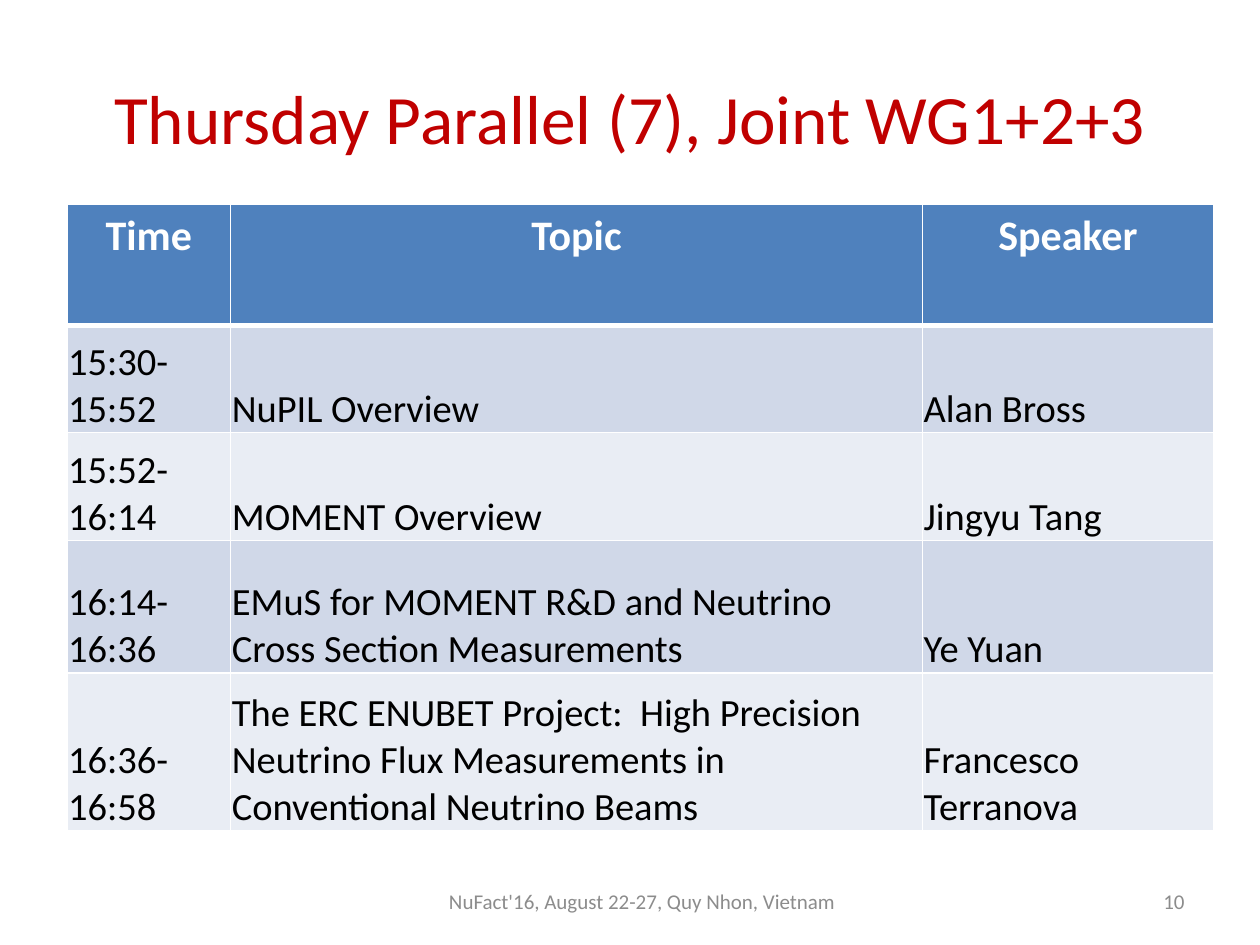
from lxml import etree
from pptx import Presentation
from pptx.dml import color
from pptx.enum import text
from pptx.oxml import ns
from pptx.util import Pt

FONT = "Calibri"
AL = text.PP_ALIGN
ANC = text.MSO_ANCHOR
HEAD = ["Time", "Topic", "Speaker"]
TALKS = [
    ["15:30-15:52", "NuPIL Overview", "Alan Bross"],
    ["15:52-16:14", "MOMENT Overview", "Jingyu Tang"],
    ["16:14-16:36", "EMuS for MOMENT R&D and Neutrino Cross Section Measurements", "Ye Yuan"],
    ["16:36-16:58", "The ERC ENUBET Project:  High Precision Neutrino Flux Measurements in "
     "Conventional Neutrino Beams", "Francesco Terranova"],
]
COLS = [93.6, 395.3, 166.3]
ROWS = [69.1, 61.2, 61.9, 75.6, 90]


def rgb(h):
    return color.RGBColor.from_string(h)


def write(tf, content, size=22, fill="000000", bold=False, align=AL.LEFT):
    tf.word_wrap = True
    p = tf.paragraphs[0]
    p.alignment = align
    r = p.add_run()
    r.text = content
    r.font.name, r.font.size, r.font.bold = FONT, Pt(size), bold
    r.font.color.rgb = rgb(fill)


def border(cell, side, width, fill="FFFFFF"):
    tcPr = cell._tc.get_or_add_tcPr()
    ln = etree.SubElement(tcPr, ns.qn("a:ln" + side), w=str(Pt(width)))
    solid = etree.SubElement(ln, ns.qn("a:solidFill"))
    etree.SubElement(solid, ns.qn("a:srgbClr"), val=fill)


def add_title(s, x, y, w, h, content):
    sp = s.shapes.title
    sp.left, sp.top, sp.width, sp.height = Pt(x), Pt(y), Pt(w), Pt(h)
    sp.text_frame.vertical_anchor = ANC.MIDDLE
    write(sp.text_frame, content, size=39.6, fill="C00000", align=AL.CENTER)


def add_schedule(s, x, y):
    data = [HEAD] + TALKS
    tbl = s.shapes.add_table(len(ROWS), len(COLS), Pt(x), Pt(y),
                             Pt(sum(COLS)), Pt(sum(ROWS))).table
    for col, w in zip(tbl.columns, COLS):
        col.width = Pt(w)
    for i, (row, h) in enumerate(zip(tbl.rows, ROWS)):
        row.height = Pt(h)
        for cell, content in zip(row.cells, data[i]):
            for side in "LRTB":
                border(cell, side, 3 if (i, side) in [(0, "B"), (1, "T")] else 1)
            cell.fill.solid()
            if i == 0:
                cell.fill.fore_color.rgb = rgb("4F81BD")
                write(cell.text_frame, content, 24, "FFFFFF", True, AL.CENTER)
            else:
                cell.fill.fore_color.rgb = rgb("D0D8E8" if i % 2 else "E9EDF4")
                cell.vertical_anchor = ANC.BOTTOM
                cell.margin_left = cell.margin_right = cell.margin_top = Pt(0.75)
                cell.margin_bottom = 0
                write(cell.text_frame, content)


def add_footer(s, x, y, w, h, content, align):
    tf = s.shapes.add_textbox(Pt(x), Pt(y), Pt(w), Pt(h)).text_frame
    tf.vertical_anchor = ANC.MIDDLE
    write(tf, content, size=12, fill="8C8C8C", align=align)


def main():
    prs = Presentation()
    prs.slide_width, prs.slide_height = Pt(720), Pt(540)
    s = prs.slides.add_slide(prs.slide_layouts[5])
    add_title(s, 36, 21.6, 648, 90, "Thursday Parallel (7), Joint WG1+2+3")
    add_schedule(s, 38.2, 116.8)
    add_footer(s, 246, 500.5, 242, 28.8, "NuFact'16, August 22-27, Quy Nhon, Vietnam", AL.CENTER)
    add_footer(s, 516, 500.5, 168, 28.8, "10", AL.RIGHT)
    prs.save("out.pptx")


if __name__ == "__main__":
    main()
